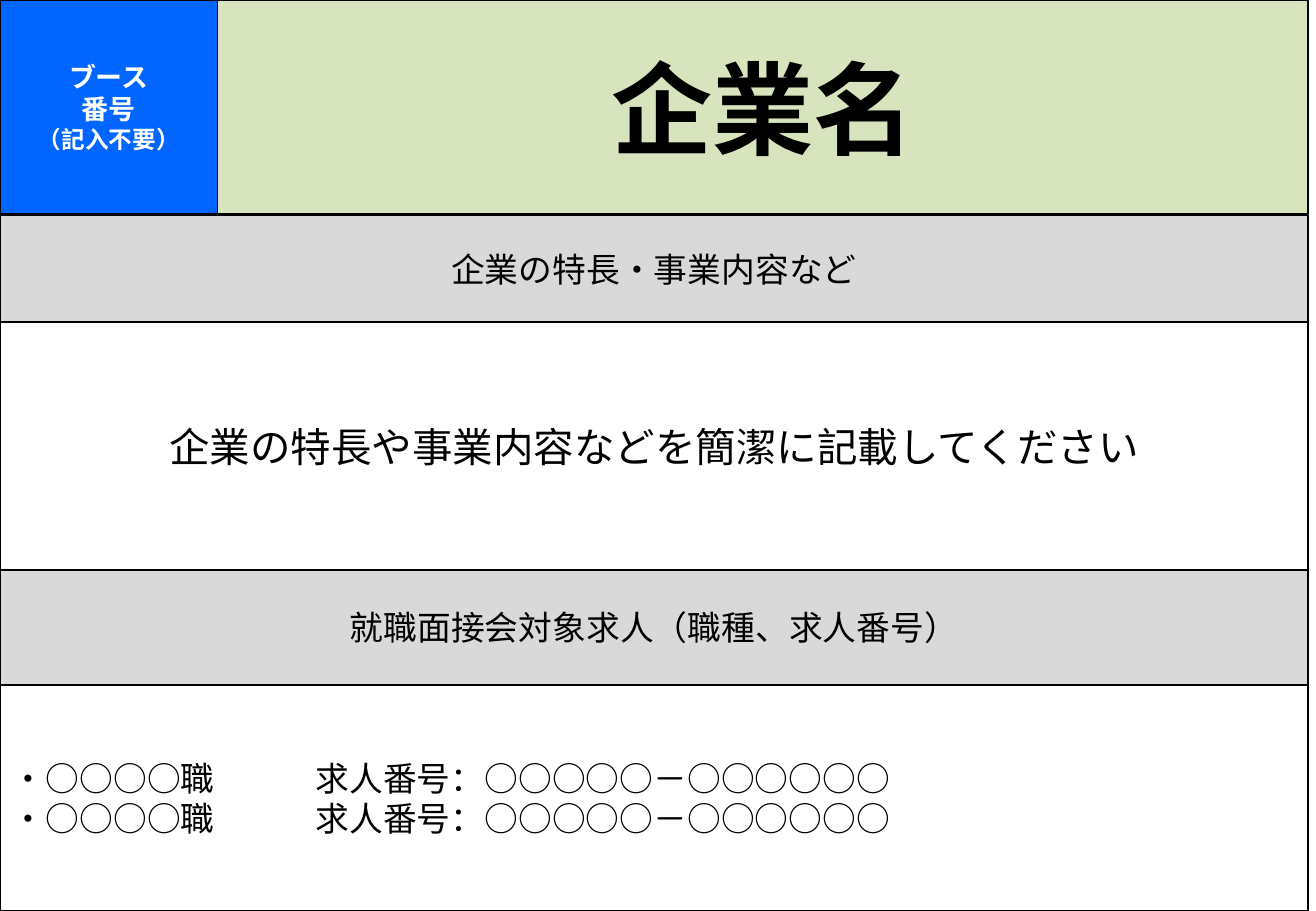
from lxml import etree
from pptx import Presentation
from pptx.dml.color import RGBColor
from pptx.enum.shapes import MSO_SHAPE
from pptx.enum.text import MSO_ANCHOR, PP_ALIGN
from pptx.oxml.ns import qn
from pptx.util import Pt

RECT = MSO_SHAPE.RECTANGLE
MIDDLE = MSO_ANCHOR.MIDDLE
LEFT, CENTER = PP_ALIGN.LEFT, PP_ALIGN.CENTER
CJK = "Noto Sans CJK JP"
LATIN = "Calibri"
BLACK, WHITE = "000000", "FFFFFF"
BLUE, GREEN, GREY = "0066FF", "D7E4BD", "D9D9D9"

SLIDE_W, SLIDE_H = 780, 540
SHEET_W = 775.4
HEADER_H = 127
BOOTH_W = 129
JOB_TAB = 180


def rgb(color):
    return RGBColor.from_string(color)


def add_cell(slide, box, lines, fill=None, color=BLACK, font=CJK,
             bold=False, align=CENTER):
    """Draw a bordered rectangle; lines holds (text, size) pairs."""
    sp = slide.shapes.add_shape(RECT, *(Pt(v) for v in box))
    sp.shadow.inherit = False
    if fill:
        sp.fill.solid()
        sp.fill.fore_color.rgb = rgb(fill)
    else:
        sp.fill.background()
    sp.line.color.rgb = rgb(BLACK)
    sp.line.width = Pt(1)
    tf = sp.text_frame
    tf.word_wrap = True
    tf.vertical_anchor = MIDDLE
    for i, (text, size) in enumerate(lines):
        p = tf.paragraphs[0] if i == 0 else tf.add_paragraph()
        p.text = text
        p.alignment = align
        p.font.size = Pt(size)
        p.font.bold = bold
        p.font.color.rgb = rgb(color)
        p.font.name = font
        props = p._p.pPr.find(qn("a:defRPr"))
        etree.SubElement(props, qn("a:ea")).set("typeface", CJK)
    return sp


def add_tab_stop(p, position):
    tabs = etree.Element(qn("a:tabLst"))
    tab = etree.SubElement(tabs, qn("a:tab"))
    tab.set("pos", str(Pt(position)))
    tab.set("algn", "l")
    p._p.pPr.find(qn("a:defRPr")).addprevious(tabs)


def add_header(slide, left, top, width, height):
    booth = [("ブース", 16), ("番号", 16), ("（記入不要）", 14)]
    add_cell(slide, (left, top, BOOTH_W, height), booth,
             BLUE, WHITE, LATIN, True)
    add_cell(slide, (left + BOOTH_W, top, width - BOOTH_W, height),
             [("企業名", 60)], GREEN, font=LATIN, bold=True)


def add_section(slide, left, top, width, height, title, title_h, lines,
                align=CENTER):
    """Stack a grey title bar on a white body and return the body."""
    body = add_cell(slide, (left, top + title_h, width, height - title_h),
                    lines, align=align)
    add_cell(slide, (left, top, width, title_h), [(title, 20)], GREY)
    return body


def main():
    prs = Presentation()
    prs.slide_width, prs.slide_height = Pt(SLIDE_W), Pt(SLIDE_H)
    slide = prs.slides.add_slide(prs.slide_layouts[6])

    add_section(slide, 0, 127.6, SHEET_W, 210.2,
                "企業の特長・事業内容など", 63.2,
                [("企業の特長や事業内容などを簡潔に記載してください", 24)])
    job = ("・○○○○職\t求人番号：○○○○○－○○○○○○", 20)
    jobs = add_section(slide, 0, 337.8, SHEET_W, SLIDE_H - 337.8,
                       "就職面接会対象求人（職種、求人番号）", 68.2,
                       [job] * 2, LEFT)
    for p in jobs.text_frame.paragraphs:
        add_tab_stop(p, JOB_TAB)
    add_header(slide, 0, 0, SHEET_W, HEADER_H)

    prs.save("out.pptx")


if __name__ == "__main__":
    main()
